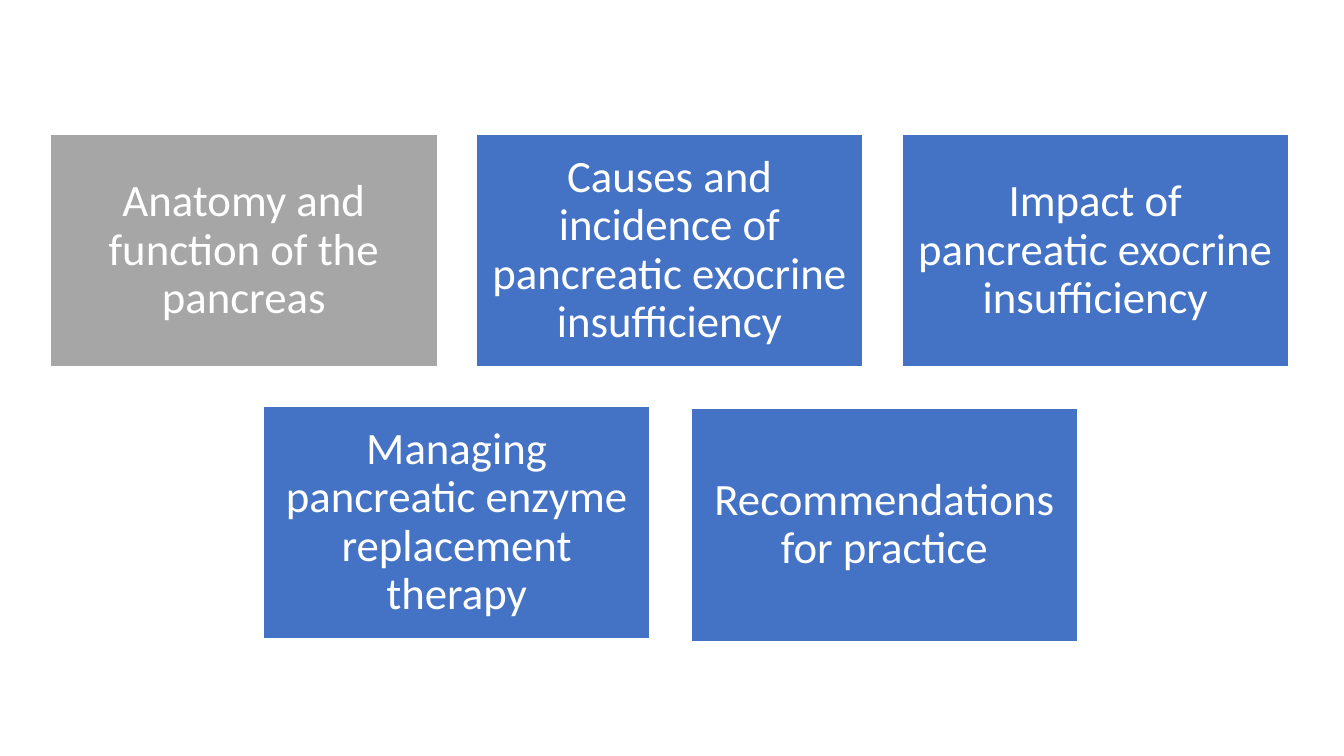
from dataclasses import dataclass

from pptx import Presentation
from pptx.dml.color import RGBColor
from pptx.enum.shapes import MSO_SHAPE
from pptx.enum.text import MSO_ANCHOR, PP_ALIGN
from pptx.util import Cm, Pt

RECT = MSO_SHAPE.RECTANGLE
MIDDLE = MSO_ANCHOR.MIDDLE
CENTER = PP_ALIGN.CENTER


@dataclass(frozen=True)
class Theme:
    white: RGBColor = RGBColor(0xFF, 0xFF, 0xFF)
    blue: RGBColor = RGBColor(0x44, 0x72, 0xC4)
    grey: RGBColor = RGBColor(0xA6, 0xA6, 0xA6)
    font: str = "Calibri"
    size: Pt = Pt(32)
    line: Pt = Pt(1)


theme = Theme()

# Sizes in centimetres
LEFT, TOP = 1.27, 3.38
WIDTH, HEIGHT = 9.75, 5.87
GAP = 0.98
INSET = 0.34

# Column, row, text, fill, and a small shift right and down
topics = [
    (0, 0, "Anatomy and function of the pancreas", theme.grey, 0, 0),
    (1, 0, "Causes and incidence of pancreatic exocrine insufficiency", theme.blue, 0, 0),
    (2, 0, "Impact of pancreatic exocrine insufficiency", theme.blue, 0, 0),
    (0.5, 1, "Managing pancreatic enzyme replacement therapy", theme.blue, 0, 0),
    (1.5, 1, "Recommendations for practice", theme.blue, 0.05, 0.06),
]

deck = Presentation()
deck.slide_width, deck.slide_height = Cm(33.87), Cm(19.05)
slide = deck.slides.add_slide(deck.slide_layouts[6])

for col, row, text, fill, right, down in topics:
    left = LEFT + col * (WIDTH + GAP) + right
    top = TOP + row * (HEIGHT + GAP) + down
    card = slide.shapes.add_shape(RECT, Cm(left), Cm(top), Cm(WIDTH), Cm(HEIGHT))
    card.shadow.inherit = False
    card.fill.solid()
    card.fill.fore_color.rgb = fill
    card.line.color.rgb = theme.white
    card.line.width = theme.line

    frame = card.text_frame
    frame.word_wrap = True
    frame.vertical_anchor = MIDDLE
    frame.margin_left = frame.margin_right = Cm(INSET)
    frame.margin_top = frame.margin_bottom = Cm(INSET)

    para = frame.paragraphs[0]
    para.text = text
    para.alignment = CENTER
    para.line_spacing = 0.9
    para.font.name = theme.font
    para.font.size = theme.size
    para.font.color.rgb = theme.white

deck.save("out.pptx")
